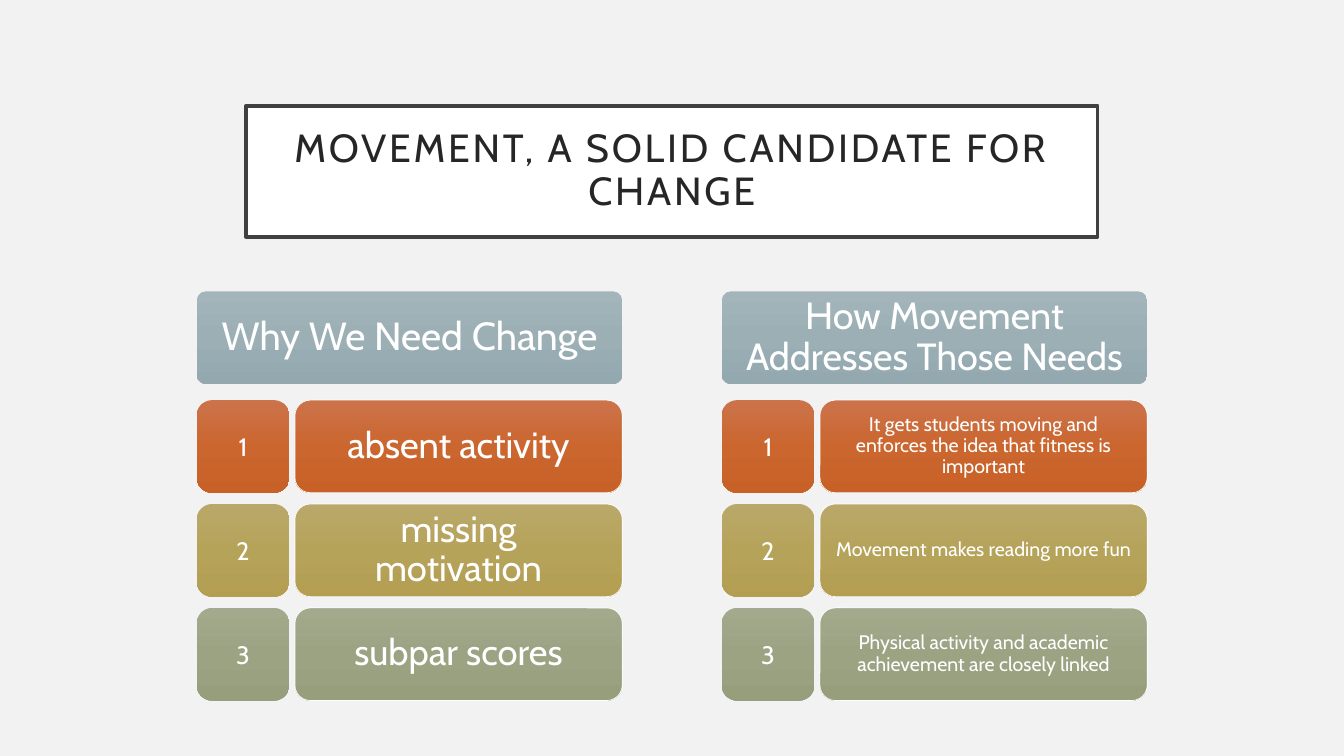
from copy import deepcopy

from pptx import Presentation
from pptx.dml.color import RGBColor
from pptx.enum.shapes import MSO_SHAPE as Preset
from pptx.enum.text import MSO_ANCHOR as Anchor, PP_ALIGN as Align
from pptx.oxml.ns import qn
from pptx.util import Pt

FONT = "Cabin"
WHITE = "FFFFFF"
HEADER_SHADES = ("A3B5BB", "9BAFB5", "93A9AF")
ROW_SHADES = (
    ("CC734B", "CB662F", "C86128"),
    ("BAA86A", "B6A35A", "B39E52"),
    ("A3A98C", "9CA383", "979E7C"),
)

HEADER_TOP, HEADER_WIDTH = 208.1, 304
ROWS_TOP, ROW_PITCH = 285.8, 74.2
TILE = 66.2
CARD_OFFSET, CARD_WIDTH = 70.2, 233.8

COLUMNS = (
    {
        "left": 140.5,
        "heading": "Why We Need Change",
        "heading_size": 28,
        "points": ("absent activity", "missing motivation", "subpar scores"),
        "point_size": 26,
        "inset": 14.4,
    },
    {
        "left": 515.5,
        "heading": "How Movement Addresses Those Needs",
        "heading_size": 27,
        "points": (
            "It gets students moving and enforces the idea that fitness is important",
            "Movement makes reading more fun",
            "Physical activity and academic achievement are closely linked",
        ),
        "point_size": 14,
        "inset": 8,
    },
)


def color(value):
    return RGBColor.from_string(value)


def add_panel(slide, preset, left, top, width, height):
    panel = slide.shapes.add_shape(preset, Pt(left), Pt(top), Pt(width), Pt(height))
    panel.shadow.inherit = False
    panel.line.fill.background()
    return panel


def set_outline(panel, value, width):
    panel.line.color.rgb = color(value)
    panel.line.width = Pt(width)


def write(panel, text, size, inset_x, inset_y, value=WHITE, spacing=0.9):
    frame = panel.text_frame
    frame.text = text
    frame.word_wrap = True
    frame.vertical_anchor = Anchor.MIDDLE
    frame.margin_left = frame.margin_right = Pt(inset_x)
    frame.margin_top = frame.margin_bottom = Pt(inset_y)
    paragraph = frame.paragraphs[0]
    paragraph.alignment = Align.CENTER
    paragraph.line_spacing = spacing
    run = paragraph.runs[0]
    run.font.name = FONT
    run.font.size = Pt(size)
    run.font.color.rgb = color(value)
    return run


def shade(panel, shades):
    panel.fill.gradient()
    panel.fill.gradient_angle = 270
    stops = panel._element.spPr.find(".//" + qn("a:gsLst"))
    stops.insert(1, deepcopy(stops[0]))
    for stop, value, position in zip(panel.fill.gradient_stops, shades, (0, 0.5, 1)):
        stop.color.rgb = color(value)
        stop.position = position


def add_rounded(slide, left, top, width, shades, rounding=0.167):
    panel = add_panel(slide, Preset.ROUNDED_RECTANGLE, left, top, width, TILE)
    panel.adjustments[0] = rounding
    shade(panel, shades)
    return panel


def add_title(slide, text):
    title = add_panel(slide, Preset.RECTANGLE, 175.7, 75.6, 608.4, 93.6)
    title.fill.solid()
    title.fill.fore_color.rgb = color(WHITE)
    set_outline(title, "404040", 2.5)
    run = write(title, text, 28, 14.4, 14.4, "262626")
    run.font._element.set("spc", "200")


def add_column(slide, left, heading, heading_size, points, point_size, inset):
    header = add_rounded(slide, left, HEADER_TOP, HEADER_WIDTH, HEADER_SHADES, 0.1)
    write(header, heading, heading_size, 4.3, 2.9)
    for index, (point, shades) in enumerate(zip(points, ROW_SHADES)):
        top = ROWS_TOP + index * ROW_PITCH
        number = add_rounded(slide, left, top, TILE, shades)
        write(number, str(index + 1), 18, 7.2, 3.6, spacing=1.0)
        card = add_rounded(slide, left + CARD_OFFSET, top, CARD_WIDTH, shades)
        set_outline(card, WHITE, 0.5)
        write(card, point, point_size, inset, inset)


def main():
    deck = Presentation()
    deck.slide_width, deck.slide_height = Pt(960), Pt(540)
    slide = deck.slides.add_slide(deck.slide_layouts[6])
    slide.background.fill.solid()
    slide.background.fill.fore_color.rgb = color("F2F2F2")
    add_title(slide, "MOVEMENT, A SOLID CANDIDATE FOR CHANGE")
    for column in COLUMNS:
        add_column(slide, **column)
    deck.save("out.pptx")


if __name__ == "__main__":
    main()
